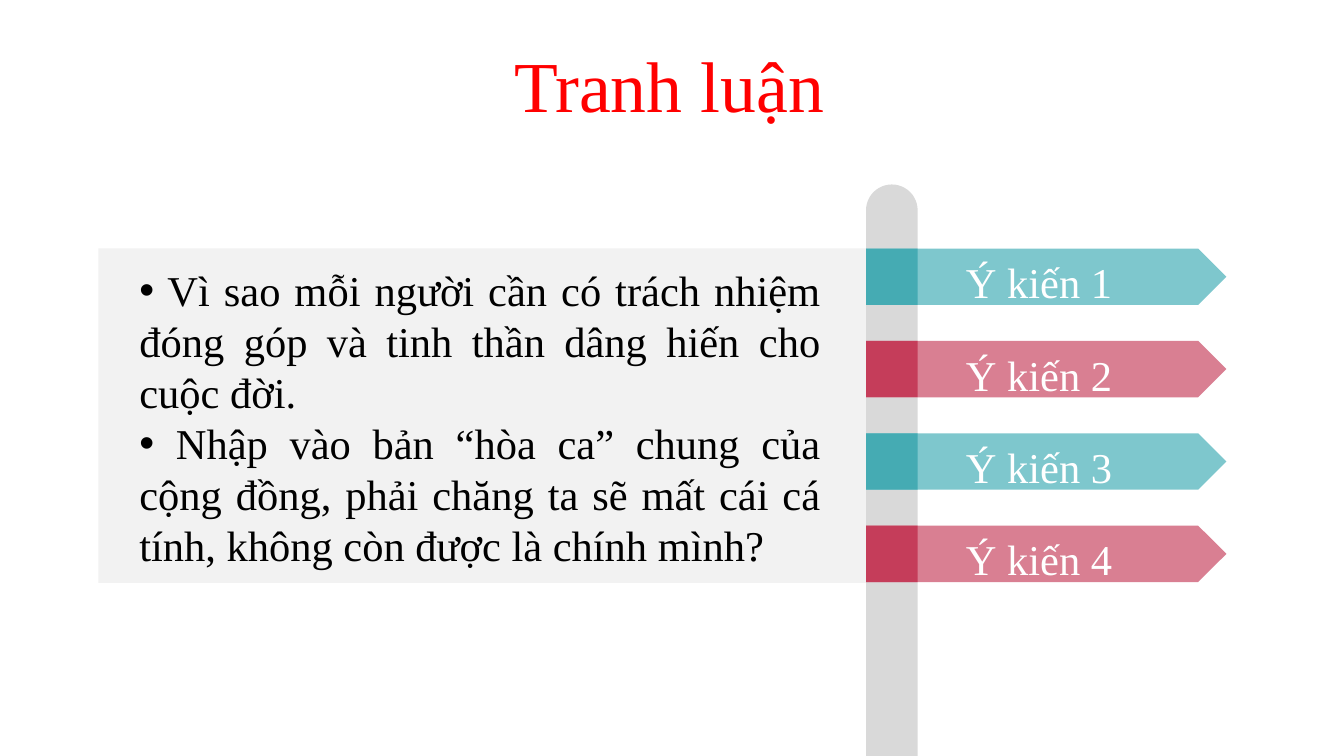
import dataclasses

import pptx
import pptx.dml.color
import pptx.enum.shapes
import pptx.enum.text
import pptx.oxml
import pptx.oxml.ns
import pptx.util

Inches = pptx.util.Inches
Shape = pptx.enum.shapes.MSO_SHAPE
Align = pptx.enum.text.PP_ALIGN
Anchor = pptx.enum.text.MSO_ANCHOR
AutoSize = pptx.enum.text.MSO_AUTO_SIZE


@dataclasses.dataclass(frozen=True)
class Theme:
    font: str = "Times New Roman"
    title_size: int = 54
    body_size: int = 32
    title: str = "FF0000"
    body: str = "000000"
    label: str = "FFFFFF"
    pole: str = "D9D9D9"
    panel: str = "F2F2F2"
    signs: tuple = (("7EC7CD", "45ABB3"), ("D97F92", "C53D5A"))


class DebateSlide:
    """Draws the parts of one debate slide in a shared style."""

    def __init__(self, slide, theme):
        self.slide = slide
        self.theme = theme

    def block(self, kind, box, color):
        block = self.slide.shapes.add_shape(kind, *map(Inches, box))
        block.shadow.inherit = False
        block.fill.solid()
        block.fill.fore_color.rgb = pptx.dml.color.RGBColor.from_string(color)
        block.line.fill.background()
        return block

    def textbox(self, box, texts, frame_format, **style):
        textbox = self.slide.shapes.add_textbox(*map(Inches, box))
        self.fill_text(textbox.text_frame, texts, frame_format, **style)

    def fill_text(self, frame, texts, frame_format, paragraph_format, size, color, bullet=None):
        for name, value in frame_format.items():
            setattr(frame, name, value)
        font_format = {"name": self.theme.font, "size": pptx.util.Pt(size)}
        for index, text in enumerate(texts):
            paragraph = frame.add_paragraph() if index else frame.paragraphs[0]
            for name, value in paragraph_format.items():
                setattr(paragraph, name, value)
            if bullet:
                self.add_bullet(paragraph, bullet)
            run = paragraph.add_run()
            run.text = text
            for name, value in font_format.items():
                setattr(run.font, name, value)
            run.font.color.rgb = pptx.dml.color.RGBColor.from_string(color)

    def add_bullet(self, paragraph, bullet):
        properties = paragraph._p.get_or_add_pPr()
        for tag, key, value in (("a:buFont", "typeface", "Arial"), ("a:buChar", "char", bullet)):
            element = pptx.oxml.parse_xml(f"<{tag} {pptx.oxml.ns.nsdecls('a')}/>")
            element.set(key, value)
            properties.append(element)

    def sign(self, left, top, text, colors):
        height = 0.59
        arrow_color, joint_color = colors
        arrow = self.block(Shape.PENTAGON, (left, top, 3.77, height), arrow_color)
        self.fill_text(
            arrow.text_frame, [text], {"vertical_anchor": Anchor.MIDDLE},
            paragraph_format={"alignment": Align.CENTER, "line_spacing": 1.2},
            size=self.theme.body_size, color=self.theme.label,
        )
        self.block(Shape.RECTANGLE, (left, top, 0.54, height), joint_color)


def main():
    theme = Theme()
    deck = pptx.Presentation()
    deck.slide_width, deck.slide_height = Inches(14.06), Inches(7.91)
    debate = DebateSlide(deck.slides.add_slide(deck.slide_layouts[6]), theme)

    pole_left, signs_top, sign_pitch = 9.06, 2.6, 2.9 / 3
    pole = debate.block(Shape.ROUND_2_SAME_RECTANGLE, (pole_left, 1.93, 0.54, 5.98), theme.pole)
    pole.adjustments[0] = 0.5
    for index in range(4):
        debate.sign(
            pole_left, signs_top + index * sign_pitch, f"Ý kiến {index + 1}",
            theme.signs[index % len(theme.signs)],
        )

    debate.textbox(
        (5.28, 0.2, 3.48, 1.19), ["Tranh luận"],
        {"word_wrap": False, "auto_size": AutoSize.SHAPE_TO_FIT_TEXT},
        paragraph_format={"line_spacing": 1.2}, size=theme.title_size, color=theme.title,
    )

    debate.block(Shape.RECTANGLE, (1.03, signs_top, 8.03, 3.5), theme.panel)
    questions = [
        " Vì sao mỗi người cần có trách nhiệm đóng góp và tinh thần dâng hiến cho cuộc đời.",
        " Nhập vào bản “hòa ca” chung của cộng đồng, phải chăng ta sẽ mất cái cá tính, "
        "không còn được là chính mình?",
    ]
    debate.textbox(
        (1.36, 2.7, 7.33, 3.33), questions,
        {"word_wrap": True, "auto_size": AutoSize.SHAPE_TO_FIT_TEXT, "vertical_anchor": Anchor.MIDDLE},
        paragraph_format={"alignment": Align.JUSTIFY}, size=theme.body_size, color=theme.body, bullet="•",
    )
    deck.save("out.pptx")


if __name__ == "__main__":
    main()
